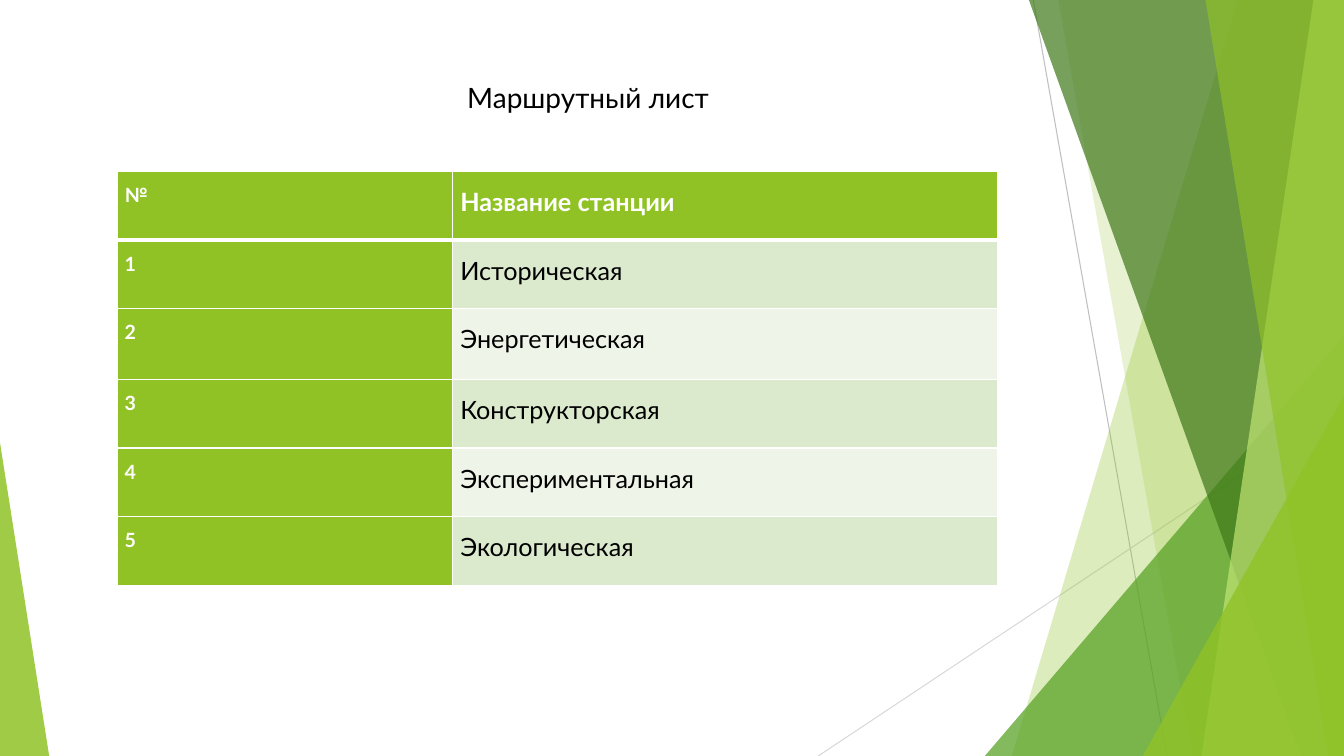
from dataclasses import dataclass

from lxml.etree import SubElement
from pptx import Presentation
from pptx.dml.color import RGBColor
from pptx.enum.shapes import MSO_CONNECTOR as Connector, MSO_SHAPE as Shape
from pptx.enum.text import MSO_ANCHOR as Anchor, MSO_AUTO_SIZE as AutoSize, PP_ALIGN as Align
from pptx.oxml.ns import qn
from pptx.util import Cm, Pt

WIDTH, HEIGHT = 33.87, 19.05
FONT = "Lato"
BLACK, WHITE, GREEN = "000000", "FFFFFF", "90C226"
BANDS = ("DBE9CD", "EEF4E8")
STATIONS = ["Историческая", "Энергетическая", "Конструкторская",
            "Экспериментальная", "Экологическая"]


@dataclass
class Ray:
    start: tuple[float, float]
    end: tuple[float, float]
    color: str


@dataclass
class Facet:
    """Full-height panel between a slanted left edge and the right slide edge."""
    top_x: float
    bottom_x: float
    color: str
    opacity: int


@dataclass
class Peak:
    """Right triangle standing on the bottom slide edge."""
    left: float
    top: float
    width: float
    apex: int
    color: str
    opacity: int


RAYS = [
    Ray((26.04, 0), (29.41, HEIGHT), "BFBFBF"),
    Ray((WIDTH, 10.24), (20.62, HEIGHT), "D9D9D9"),
]
DECOR = [
    Facet(31.19, 25.5, GREEN, 30),
    Facet(26.67, 30.05, GREEN, 20),
    Peak(24.82, 8.46, 9.05, 1, "54A021", 72),
    Facet(25.93, 32.79, "3F7819", 70),
    Facet(33.1, 30.28, "C0E474", 70),
    Facet(30.38, 33.48, GREEN, 65),
    Peak(28.8, 9.98, 5.07, 1, GREEN, 80),
    Peak(0, 11.15, 1.24, 0, GREEN, 85),
]


def rgb(color: str) -> RGBColor:
    return RGBColor.from_string(color)


def write(frame, text: str, *, size: float, color: str, bold: bool = False,
          align=Align.LEFT, line_spacing: float = 1.0, gap: float = 0) -> None:
    frame.word_wrap = True
    paragraph = frame.paragraphs[0]
    paragraph.alignment = align
    paragraph.line_spacing = line_spacing
    paragraph.space_before = paragraph.space_after = Pt(gap)
    run = paragraph.add_run()
    run.text = text
    run.font.name, run.font.size, run.font.bold = FONT, Pt(size), bold
    run.font.color.rgb = rgb(color)


def draw_ray(shapes, ray: Ray) -> None:
    line = shapes.add_connector(Connector.STRAIGHT, *map(Cm, ray.start + ray.end))
    line.line.color.rgb = rgb(ray.color)
    line.line.width = Pt(0.75)
    SubElement(line.element.spPr, qn("a:effectLst"))


def draw_decor(shapes, part: Facet | Peak) -> None:
    if isinstance(part, Facet):
        outline = shapes.build_freeform(Cm(part.top_x), 0)
        corners = [(WIDTH, 0), (WIDTH, HEIGHT), (part.bottom_x, HEIGHT)]
        outline.add_line_segments([(Cm(x), Cm(y)) for x, y in corners], close=True)
        shape = outline.convert_to_shape()
    else:
        shape = shapes.add_shape(Shape.ISOSCELES_TRIANGLE, Cm(part.left), Cm(part.top),
                                 Cm(part.width), Cm(HEIGHT - part.top))
        shape.adjustments[0] = part.apex
    shape.shadow.inherit = False
    shape.line.fill.background()
    shape.fill.solid()
    shape.fill.fore_color.rgb = rgb(part.color)
    tint = shape.fill._xPr.find(qn("a:solidFill"))[0]
    SubElement(tint, qn("a:alpha"), val=str(part.opacity * 1000))


def set_borders(cell, bottom: float) -> None:
    properties = cell._tc.get_or_add_tcPr()
    for side, width in (("L", 1), ("R", 1), ("T", 1), ("B", bottom)):
        border = SubElement(properties, qn(f"a:ln{side}"), w=str(Pt(width)))
        SubElement(SubElement(border, qn("a:solidFill")), qn("a:srgbClr"), val=WHITE)


def draw_route(shapes) -> None:
    rows = [("№", "Название станции")]
    rows += [(str(number), name) for number, name in enumerate(STATIONS, 1)]
    table = shapes.add_table(len(rows), 2, Cm(2.95), Cm(4.32), Cm(22.2), Cm(10.43)).table
    table.horz_banding = False
    table.first_col = True
    for column, width in zip(table.columns, (8.46, 13.74)):
        column.width = Cm(width)
    for r, texts in enumerate(rows):
        table.rows[r].height = Cm(1.78 if r == 2 else 1.73)
        for c, text in enumerate(texts):
            cell = table.cell(r, c)
            heading = r == 0 or c == 0
            set_borders(cell, bottom=3 if r == 0 else 1)
            cell.fill.solid()
            cell.fill.fore_color.rgb = rgb(GREEN if heading else BANDS[(r - 1) % 2])
            cell.margin_left = cell.margin_right = Cm(0.19)
            cell.margin_top = cell.margin_bottom = 0
            write(cell.text_frame, text, size=18 if c else 14, bold=heading,
                  color=WHITE if heading else BLACK, align=Align.JUSTIFY,
                  line_spacing=1.5, gap=2)


def main() -> None:
    deck = Presentation()
    deck.slide_width, deck.slide_height = Cm(WIDTH), Cm(HEIGHT)
    slide = deck.slides.add_slide(deck.slide_layouts[5])

    # Background rays and facets
    for ray in RAYS:
        draw_ray(slide.shapes, ray)
    for part in DECOR:
        draw_decor(slide.shapes, part)

    # Title
    title = slide.shapes.title
    title.left, title.top, title.width, title.height = map(Cm, (5.46, 1.9, 18.72, 1.12))
    title.text_frame.auto_size = AutoSize.NONE
    title.text_frame.vertical_anchor = Anchor.MIDDLE
    write(title.text_frame, "Маршрутный лист", size=20, color=BLACK, align=Align.CENTER)

    # Stations table
    draw_route(slide.shapes)
    deck.save("out.pptx")


if __name__ == "__main__":
    main()
